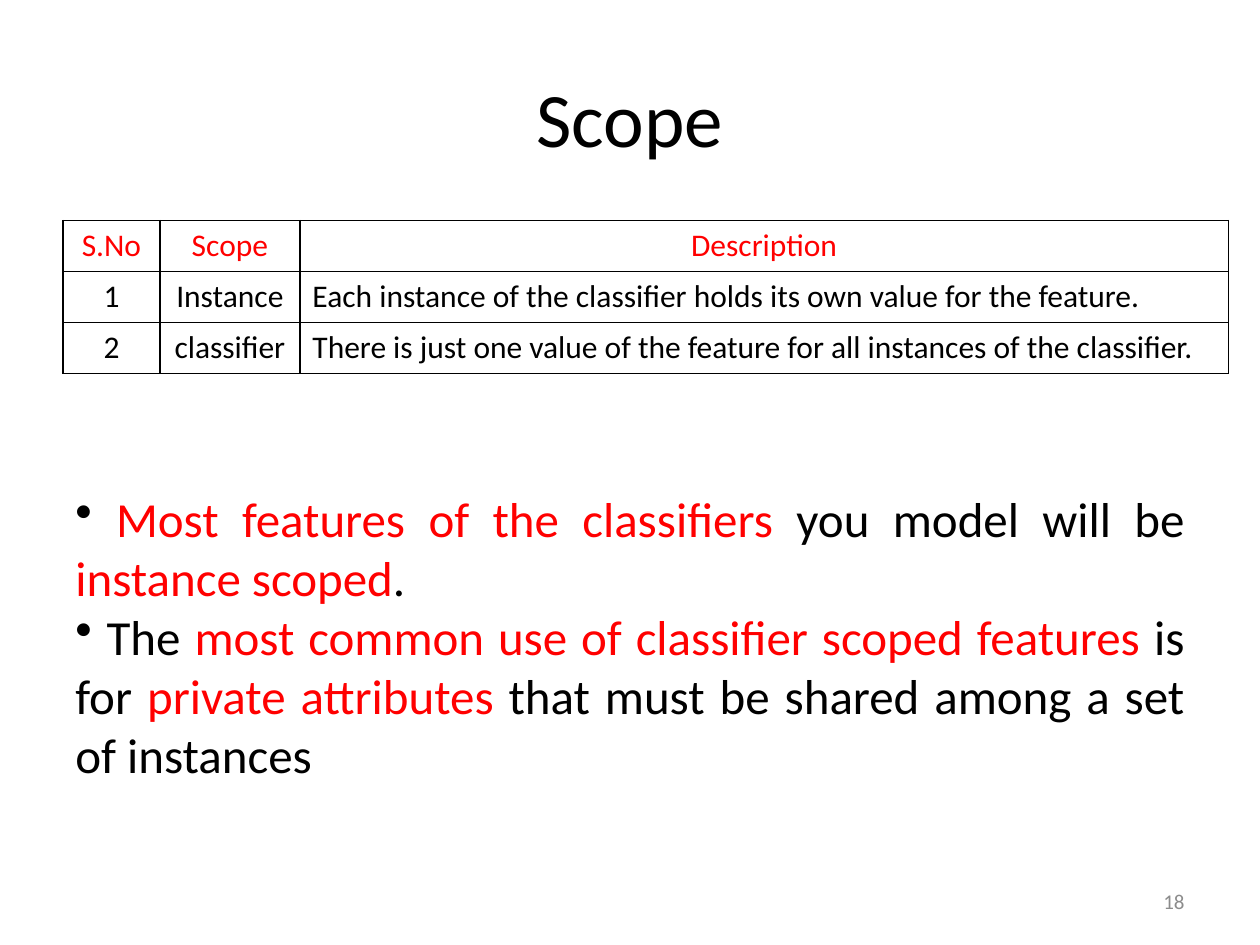
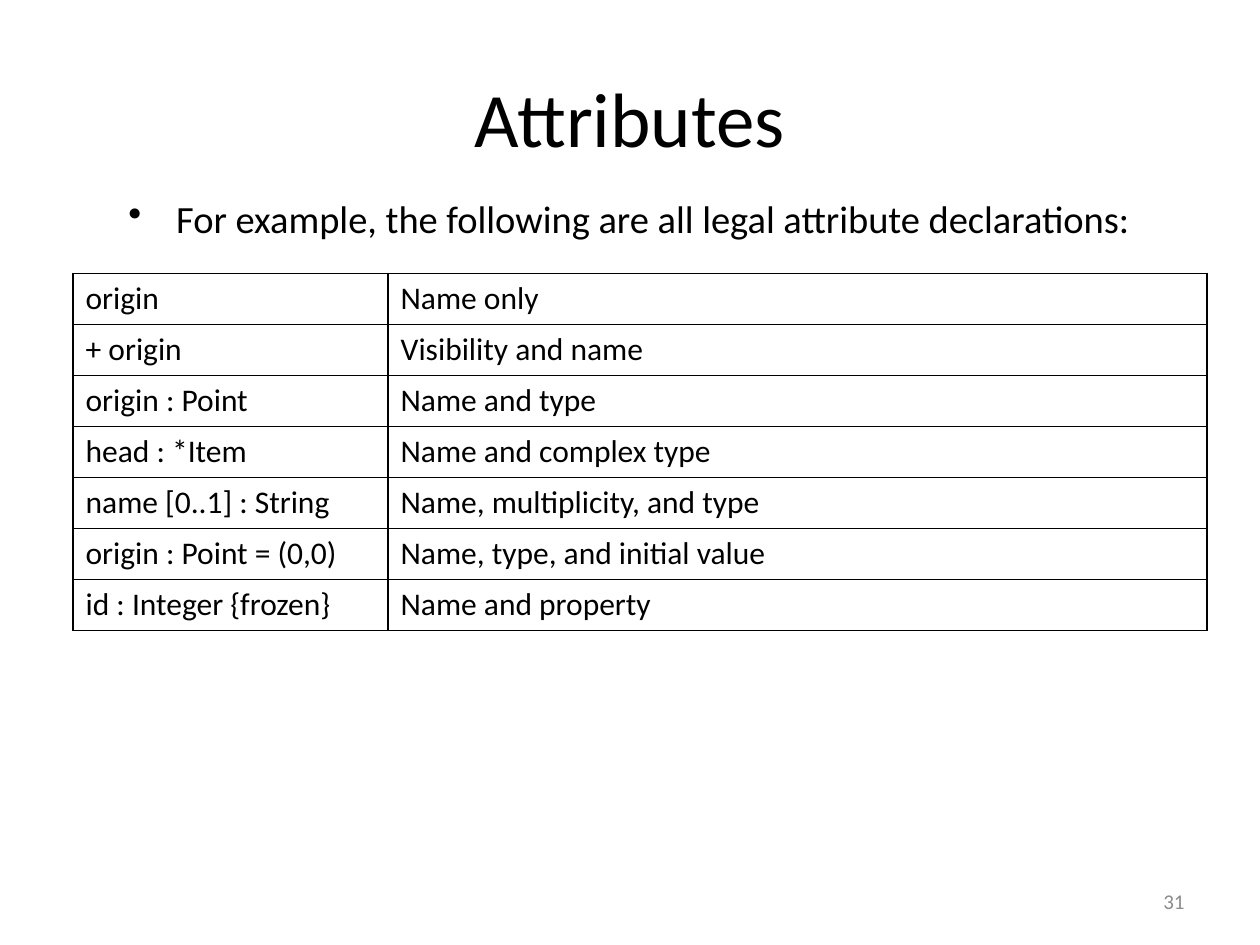
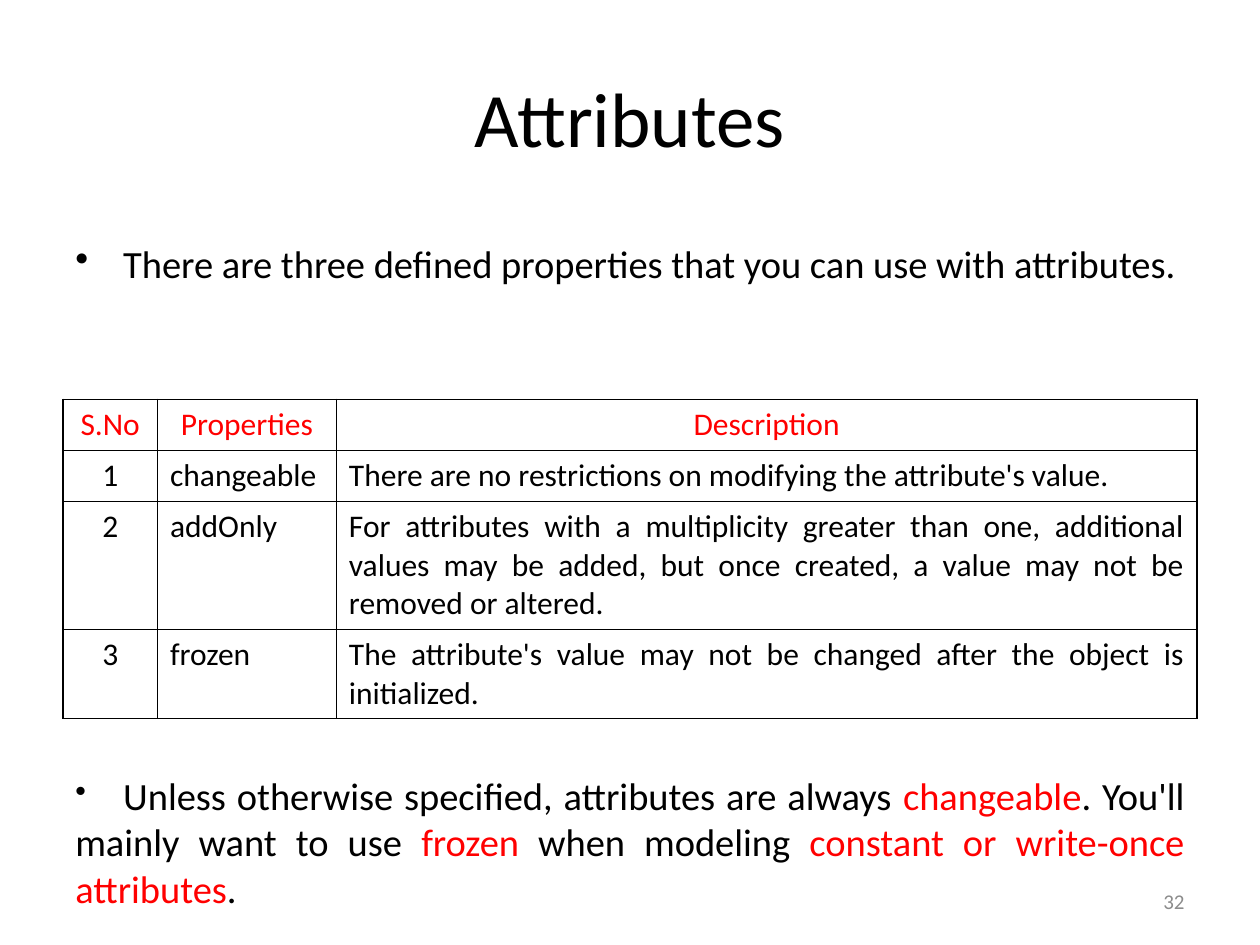
from dataclasses import dataclass

from pptx import Presentation
from pptx.dml.color import RGBColor
from pptx.enum.text import MSO_ANCHOR as Anchor, MSO_AUTO_SIZE as AutoSize, PP_ALIGN as Align
from pptx.oxml.ns import qn
from pptx.util import Inches, Pt
from lxml.etree import SubElement, Element


@dataclass(frozen=True)
class Theme:
    """Colours, font and type sizes shared by all slides."""
    font: str = "Calibri"
    ink: str = "000000"
    accent: str = "FF0000"
    muted: str = "8C8C8C"
    title: int = 44
    lead: int = 28
    body: int = 22
    cell: int = 18
    number: int = 12
    border: int = 1
    hang: float = 0.38
    line: float = 0.305
    padding: float = 0.1


THEME = Theme()


def write_text(paragraph, text, *, size, color=THEME.ink, align=Align.LEFT):
    """Write text whose parts between bars take the accent colour."""
    paragraph.alignment = align
    for index, part in enumerate(text.split("|")):
        if not part:
            continue
        run = paragraph.add_run()
        run.text = part
        run.font.name = THEME.font
        run.font.size = Pt(size)
        run.font.color.rgb = RGBColor.from_string(THEME.accent if index % 2 else color)


def add_bullet(paragraph, *, hang=0, tab=0, scale=100):
    """Give a paragraph a bullet, with a hanging indent or a tab stop."""
    properties = paragraph._p.get_or_add_pPr()
    properties.set("marL", str(Inches(hang)))
    properties.set("indent", str(-Inches(hang)))
    SubElement(properties, qn("a:buSzPct"), val=str(scale * 1000))
    SubElement(properties, qn("a:buChar"), char="•")
    if tab:
        stops = SubElement(properties, qn("a:tabLst"))
        SubElement(stops, qn("a:tab"), pos=str(Inches(tab)), algn="l")


def add_borders(cell):
    """Draw a solid line on each side of a table cell."""
    properties = cell._tc.get_or_add_tcPr()
    for index, side in enumerate(("a:lnL", "a:lnR", "a:lnT", "a:lnB")):
        line = Element(qn(side), w=str(Pt(THEME.border)))
        fill = SubElement(line, qn("a:solidFill"))
        SubElement(fill, qn("a:srgbClr"), val=THEME.ink)
        properties.insert(index, line)


class Deck:
    """Holds the presentation and the slide being built."""

    def __init__(self):
        """Start an empty presentation."""
        self.presentation = Presentation()
        self.presentation.slide_width = Inches(10)
        self.presentation.slide_height = Inches(7.5)
        self.slide = None

    def add_slide(self, title, number):
        """Add a slide with its title and page number."""
        self.slide = self.presentation.slides.add_slide(self.presentation.slide_layouts[6])
        frame = self.add_frame(0.5, 0.3, 9, 1.25, Anchor.MIDDLE)
        write_text(frame.paragraphs[0], title, size=THEME.title, align=Align.CENTER)
        frame = self.add_frame(7.17, 6.95, 2.33, 0.4, Anchor.MIDDLE)
        write_text(frame.paragraphs[0], str(number), size=THEME.number,
                   color=THEME.muted, align=Align.RIGHT)

    def add_frame(self, left, top, width, height, anchor=Anchor.TOP):
        """Add a wrapping text box and return its text frame."""
        box = self.slide.shapes.add_textbox(
            Inches(left), Inches(top), Inches(width), Inches(height))
        frame = box.text_frame
        frame.word_wrap = True
        frame.vertical_anchor = anchor
        return frame

    def add_bullets(self, left, top, width, height, texts, *,
                    size=THEME.body, align=Align.LEFT, **bullet):
        """Add a text box with one bullet for each text."""
        frame = self.add_frame(left, top, width, height)
        frame.auto_size = AutoSize.SHAPE_TO_FIT_TEXT
        for index, text in enumerate(texts):
            paragraph = frame.add_paragraph() if index else frame.paragraphs[0]
            write_text(paragraph, text, size=size, align=align)
            add_bullet(paragraph, **bullet)

    def add_table(self, left, top, widths, rows, aligns, *, header=True, lines=None):
        """Add a bordered table, with row heights set by their lines of text."""
        heights = [THEME.padding + THEME.line * count for count in lines or [1] * len(rows)]
        table = self.slide.shapes.add_table(
            len(rows), len(widths), Inches(left), Inches(top),
            Inches(sum(widths)), Inches(sum(heights))).table
        table.first_row = table.horz_banding = False
        for column, width in zip(table.columns, widths):
            column.width = Inches(width)
        for row_index, (row, height) in enumerate(zip(rows, heights)):
            table.rows[row_index].height = Inches(height)
            is_header = header and row_index == 0
            for column_index, (text, align) in enumerate(zip(row, aligns)):
                cell = table.cell(row_index, column_index)
                cell.fill.background()
                add_borders(cell)
                write_text(cell.text_frame.paragraphs[0], text, size=THEME.cell,
                           color=THEME.accent if is_header else THEME.ink,
                           align=Align.CENTER if is_header else align)


def build_scope(deck):
    """Build the slide on scope."""
    deck.add_slide("Scope", 18)
    deck.add_table(0.5, 1.75, (0.77, 1.11, 7.37), (
        ("S.No", "Scope", "Description"),
        ("1", "Instance", "Each instance of the classifier holds its own value for the feature."),
        ("2", "classifier",
         "There is just one value of the feature for all instances of the classifier."),
    ), (Align.CENTER, Align.CENTER, Align.LEFT))
    deck.add_bullets(0.5, 3.83, 9, 2.46, (
        " |Most features of the classifiers |you model will be |instance scoped|.",
        " The |most common use of classifier scoped features |is for |private attributes"
        "| that must be shared among a set of instances",
    ), size=THEME.lead, align=Align.JUSTIFY)


def build_declarations(deck):
    """Build the slide on attribute declarations."""
    deck.add_slide("Attributes", 31)
    deck.add_table(0.58, 2.17, (2.5, 6.5), (
        ("origin", "Name only"),
        ("+ origin", "Visibility and name"),
        ("origin : Point", "Name and type"),
        ("head : *Item", "Name and complex type"),
        ("name [0..1] : String", "Name, multiplicity, and type"),
        ("origin : Point = (0,0)", "Name, type, and initial value"),
        ("id : Integer {frozen}", "Name and property"),
    ), (Align.LEFT, Align.LEFT), header=False)
    deck.add_bullets(0.92, 1.5, 8.25, 0.47, (
        "For example, the following are all legal attribute declarations:",
    ), hang=THEME.hang)


def build_properties(deck):
    """Build the slide on attribute properties."""
    deck.add_slide("Attributes", 32)
    deck.add_table(0.5, 3.17, (0.75, 1.42, 6.83), (
        ("S.No", "Properties", "Description"),
        ("1", "changeable", "There are no restrictions on modifying the attribute's value."),
        ("2", "addOnly",
         "For attributes with a multiplicity greater than one, additional values may be added, "
         "but once created, a value may not be removed or altered."),
        ("3", "frozen",
         "The attribute's value may not be changed after the object is initialized."),
    ), (Align.CENTER, Align.JUSTIFY, Align.JUSTIFY), lines=(1, 1, 3, 2))
    deck.add_bullets(0.5, 1.86, 9, 0.47, (
        "There are three defined properties that you can use with attributes.",
    ), hang=THEME.hang)
    deck.add_bullets(0.5, 6.08, 9, 1.21, (
        "\tUnless otherwise specified, attributes are always |changeable|. You'll mainly want "
        "to use |frozen| when modeling |constant or write-once attributes|.",
    ), align=Align.JUSTIFY, tab=THEME.hang, scale=82)


def main():
    """Build and save the slides."""
    deck = Deck()
    build_scope(deck)
    build_declarations(deck)
    build_properties(deck)
    deck.presentation.save("out.pptx")


if __name__ == "__main__":
    main()
